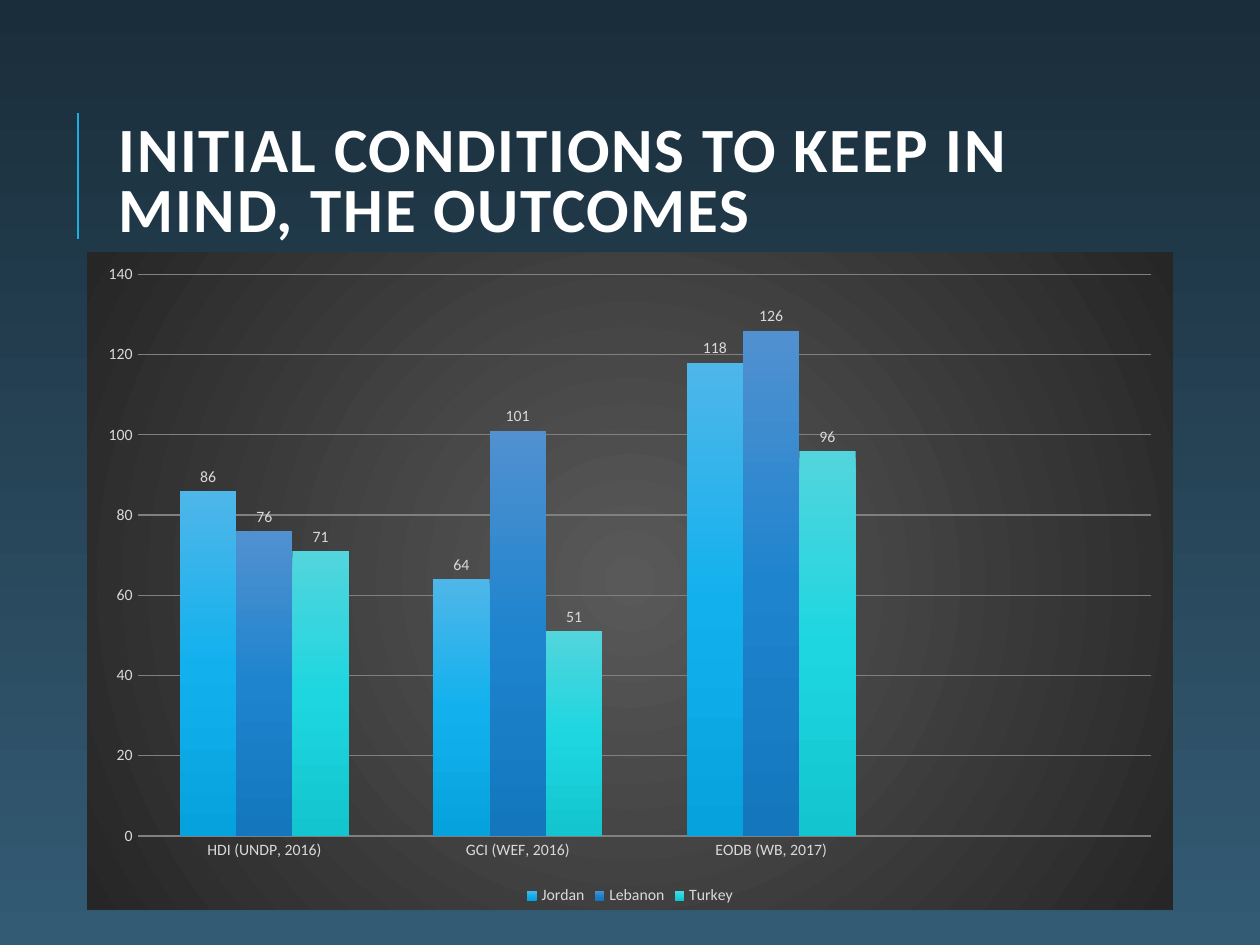
from lxml.etree import SubElement as Sub
from pptx import Presentation
from pptx.chart.data import CategoryChartData as Data
from pptx.dml.color import RGBColor
from pptx.enum.chart import XL_CHART_TYPE as Kind, XL_LABEL_POSITION as Spot
from pptx.enum.chart import XL_LEGEND_POSITION as Side, XL_TICK_MARK as Tick
from pptx.enum.shapes import MSO_CONNECTOR as Link
from pptx.enum.text import MSO_ANCHOR as Anchor, PP_ALIGN as Align
from pptx.oxml import parse_xml
from pptx.oxml.ns import nsdecls, qn
from pptx.util import Emu, Pt

SCALE = 914400 / 126
FONT = "Calibri"
PALE = "D9D9D9"
CATS = ["HDI (UNDP, 2016)", "GCI (WEF, 2016)", "EODB (WB, 2017)", ""]
ROWS = [
    ("Jordan", [86, 64, 118, None], ["4FB6E9", "12B1EE", "06A2DD"]),
    ("Lebanon", [76, 101, 126, None], ["5191D0", "1E84CE", "1477BE"]),
    ("Turkey", [71, 51, 96, None], ["52D5DD", "1ED6E0", "13C5CF"]),
]


def px(n):
    return Emu(round(n * SCALE))


def paint(hue):
    return RGBColor.from_string(hue)


def style(font, size, hue, bold=False):
    font.name = FONT
    font.size = Pt(size)
    font.bold = bold
    font.color.rgb = paint(hue)


def blend(box, hues, round_off=False):
    old = box.find(qn("a:solidFill"))
    grad = parse_xml(f'<a:gradFill {nsdecls("a")} rotWithShape="1"/>')
    stops = Sub(grad, qn("a:gsLst"))
    for i, hue in enumerate(hues):
        stop = Sub(stops, qn("a:gs"), pos=str(100000 * i // (len(hues) - 1)))
        Sub(stop, qn("a:srgbClr"), val=hue)
    if round_off:
        ring = Sub(grad, qn("a:path"), path="circle")
        Sub(ring, qn("a:fillToRect"), {side: "50000" for side in "ltrb"})
    else:
        Sub(grad, qn("a:lin"), ang="5400000", scaled="0")
    box.replace(old, grad)


def add_back(slide):
    slide.background.fill.solid()
    blend(slide._element.find(".//" + qn("p:bgPr")), ["1A2D3A", "335B74"])


def add_rule(slide, x, top, foot):
    rule = slide.shapes.add_connector(Link.STRAIGHT, px(x), px(foot), px(x), px(top))
    rule.line.color.rgb = paint("1CADE4")
    rule.line.width = Pt(1.5)
    Sub(rule._element.spPr, qn("a:effectLst"))


def set_title(slide, text, x, y, w, h):
    title = slide.shapes.title
    title.left, title.top, title.width, title.height = map(px, (x, y, w, h))
    frame = title.text_frame
    frame.text = text
    frame.word_wrap = True
    frame.vertical_anchor = Anchor.MIDDLE
    para = frame.paragraphs[0]
    para.alignment = Align.LEFT
    para.line_spacing = 0.8
    run = para.runs[0]
    style(run.font, 36, "FFFFFF", True)
    run.font._element.set("spc", "100")


def set_axis(axis):
    axis.major_tick_mark = axis.minor_tick_mark = Tick.NONE
    axis.format.line.fill.background()
    style(axis.tick_labels.font, 9, PALE)


def set_bars(bars, hues):
    bars.format.fill.solid()
    blend(bars._element.find(qn("c:spPr")), hues)
    labels = bars.data_labels
    labels.show_value = True
    labels.position = Spot.OUTSIDE_END
    style(labels.font, 9, PALE)


def set_panel(chart):
    panel = parse_xml(f'<c:spPr {nsdecls("c", "a")}><a:solidFill/>'
                      '<a:ln><a:noFill/></a:ln></c:spPr>')
    blend(panel, ["595959", "262626"], True)
    chart._chartSpace.find(qn("c:txPr")).addprevious(panel)


def add_bars(slide, x, y, w, h):
    data = Data()
    data.categories = CATS
    for name, vals, hues in ROWS:
        data.add_series(name, vals)
    chart = slide.shapes.add_chart(
        Kind.COLUMN_CLUSTERED, *map(px, (x, y, w, h)), data).chart
    style(chart.font, 10, "FFFFFF")
    chart.has_title = False
    set_panel(chart)
    chart.has_legend = True
    chart.legend.position = Side.BOTTOM
    chart.legend.include_in_layout = False
    style(chart.legend.font, 9, PALE)
    set_axis(chart.category_axis)
    scale = chart.value_axis
    set_axis(scale)
    scale.minimum_scale, scale.maximum_scale, scale.major_unit = 0, 140, 20
    grid = scale.major_gridlines.format.line
    grid.color.rgb = paint("808080")
    grid.width = Pt(0.75)
    plot = chart.plots[0]
    plot.vary_by_categories = False
    plot.gap_width = 150
    plot.overlap = 0
    for bars, (name, vals, hues) in zip(plot.series, ROWS):
        set_bars(bars, hues)


def main():
    deck = Presentation()
    deck.slide_width, deck.slide_height = px(1260), px(945)
    slide = deck.slides.add_slide(deck.slide_layouts[5])
    add_back(slide)
    add_rule(slide, 78, 113, 239)
    set_title(slide, "INITIAL CONDITIONS TO KEEP IN MIND, THE OUTCOMES",
              106, 81, 1004, 207)
    add_bars(slide, 87, 252, 1086, 658)
    deck.save("out.pptx")


if __name__ == "__main__":
    main()
